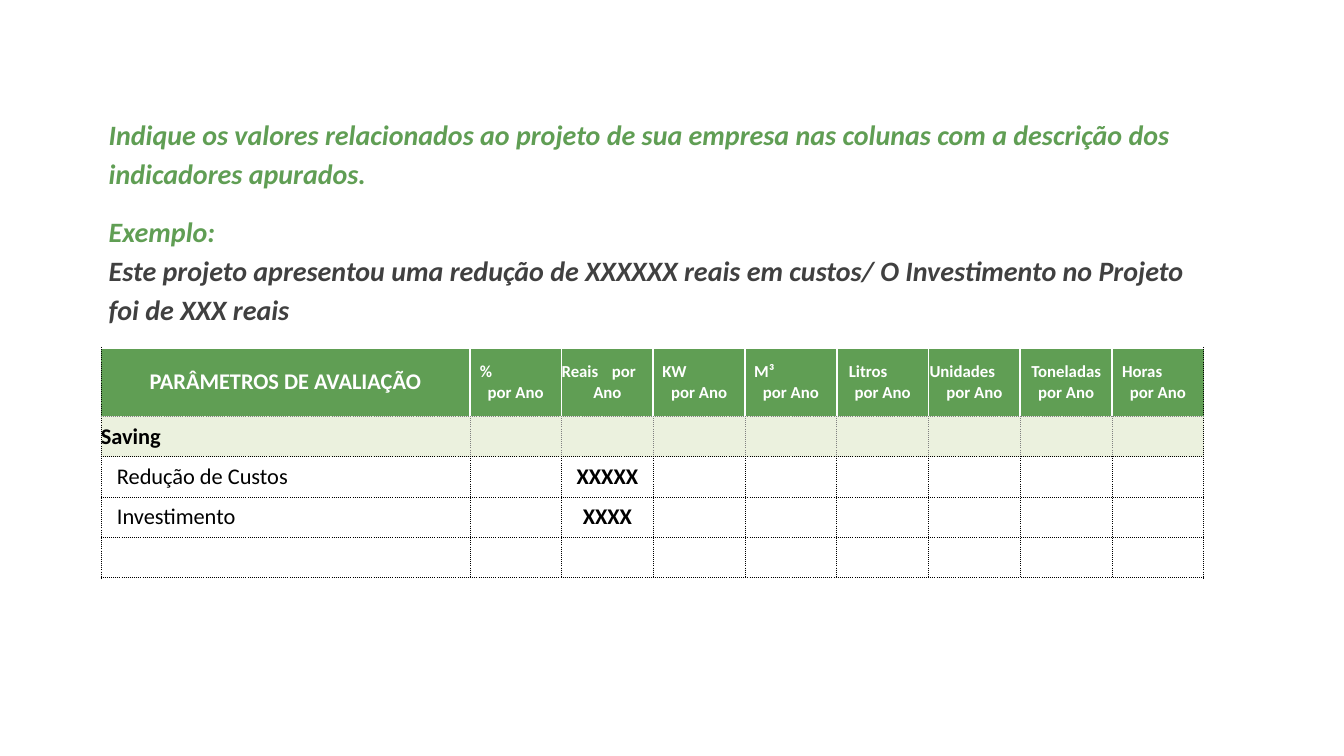
from lxml import etree
from pptx import Presentation
from pptx.dml.color import RGBColor
from pptx.enum.text import MSO_ANCHOR, PP_ALIGN
from pptx.oxml.ns import qn
from pptx.util import Pt

LEFT, CENTER = PP_ALIGN.LEFT, PP_ALIGN.CENTER
MIDDLE = MSO_ANCHOR.MIDDLE

GREEN = RGBColor(0x60, 0x9E, 0x54)
PALE_GREEN = RGBColor(0xEB, 0xF1, 0xDE)
WHITE = RGBColor(0xFF, 0xFF, 0xFF)
BLACK = RGBColor(0x00, 0x00, 0x00)
GRAY = RGBColor(0x80, 0x80, 0x80)
DARK_GRAY = RGBColor(0x40, 0x40, 0x40)

EMU_PER_PX = 9144
SOLID_WHITE = (WHITE, 1.5, "solid")
DOTTED_GRAY = (GRAY, 0.5, "sysDot")
DOTTED_BLACK = (BLACK, 0.5, "sysDot")

COLUMN_WIDTHS = [366] + [91] * 8
ROW_HEIGHTS = [68] + [40] * 4
UNITS = [
    ("%", "por Ano", 10), ("Reais\tpor", "Ano", 0), ("KW", "por Ano", 9),
    ("M³", "por Ano", 9), ("Litros", "por Ano", 12), ("Unidades", "por Ano", 1),
    ("Toneladas", "por Ano", 11), ("Horas", "por Ano", 10),
]
INDICATORS = [("Redução de Custos", "XXXXX"), ("Investimento", "XXXX")]


def px(length):
    return int(length * EMU_PER_PX)


class SlideBuilder:
    """Adds text and tables in one shared style to the current slide."""

    def __init__(self, deck, font="Calibri"):
        self.font = font
        self.page = deck.slides.add_slide(deck.slide_layouts[6])

    def style(self, para, size, color=None, bold=True, italic=False, align=LEFT):
        para.alignment = align
        font = para.font
        font.name, font.size, font.bold, font.italic = self.font, Pt(size), bold, italic
        if color is not None:
            font.color.rgb = color

    def instructions(self, left, top, width, height, paragraphs):
        box = self.page.shapes.add_textbox(px(left), px(top), px(width), px(height))
        frame = box.text_frame
        frame.word_wrap = True
        for index, spans in enumerate(paragraphs):
            para = frame.add_paragraph() if index else frame.paragraphs[0]
            self.style(para, 20, italic=True)
            para.line_spacing = 1.15
            para.space_before = Pt(10 if index else 0)
            para.space_after = Pt(4)
            for line, (text, color) in enumerate(spans):
                if line:
                    para.add_line_break()
                span = para.add_run()
                span.text = text
                span.font.color.rgb = color

    def table(self, left, top, widths, heights):
        frame = self.page.shapes.add_table(
            len(heights), len(widths), px(left), px(top), px(sum(widths)), px(sum(heights)))
        table = frame.table
        table.first_row = table.horz_banding = False
        for column, width in zip(table.columns, widths):
            column.width = px(width)
        for row, height in zip(table.rows, heights):
            row.height = px(height)
        return table

    def cell(self, cell, fill, borders):
        cell.margin_left = cell.margin_right = cell.margin_top = cell.margin_bottom = 0
        cell.vertical_anchor = MIDDLE
        properties = cell._tc.get_or_add_tcPr()
        for side, (color, width, dash) in zip("LRTB", borders):
            line = etree.SubElement(properties, qn(f"a:ln{side}"), w=str(Pt(width)))
            paint = etree.SubElement(line, qn("a:solidFill"))
            etree.SubElement(paint, qn("a:srgbClr"), val=str(color))
            etree.SubElement(line, qn("a:prstDash"), val=dash)
        cell.fill.solid()
        cell.fill.fore_color.rgb = fill

    def label(self, cell, text, size=16, color=BLACK, bold=True, align=LEFT, indent=0):
        cell.margin_left = px(indent)
        para = cell.text_frame.paragraphs[0]
        para.text = text
        self.style(para, size, color, bold, align=align)

    def unit(self, cell, name, period, indent, tab):
        frame = cell.text_frame
        first, second = frame.paragraphs[0], frame.add_paragraph()
        first.text, second.text = name, period
        properties = first._p.get_or_add_pPr()
        properties.set("marL", str(px(indent)))
        properties.set("indent", "0")
        tabs = etree.SubElement(properties, qn("a:tabLst"))
        etree.SubElement(tabs, qn("a:tab"), pos=str(px(tab)), algn="r")
        self.style(first, 12, WHITE)
        self.style(second, 12, WHITE, align=CENTER)


def cell_borders(row, column, last_column):
    if row == 0:
        inner, top, bottom = SOLID_WHITE, SOLID_WHITE, DOTTED_GRAY
    elif row == 1:
        inner, top, bottom = DOTTED_GRAY, DOTTED_GRAY, DOTTED_BLACK
    else:
        inner = top = bottom = DOTTED_BLACK
    left = DOTTED_BLACK if column == 0 else inner
    right = DOTTED_BLACK if column == last_column else inner
    return left, right, top, bottom


def main():
    deck = Presentation()
    deck.slide_width, deck.slide_height = px(1333), px(750)
    builder = SlideBuilder(deck)

    table = builder.table(100, 345, COLUMN_WIDTHS, ROW_HEIGHTS)
    row_fills = [GREEN, PALE_GREEN, WHITE, WHITE, WHITE]
    for row, fill in enumerate(row_fills):
        for column in range(len(COLUMN_WIDTHS)):
            borders = cell_borders(row, column, len(COLUMN_WIDTHS) - 1)
            builder.cell(table.cell(row, column), fill, borders)

    builder.label(table.cell(0, 0), "PARÂMETROS DE AVALIAÇÃO", color=WHITE, align=CENTER)
    for column, (name, period, indent) in enumerate(UNITS, start=1):
        builder.unit(table.cell(0, column), name, period, indent, tab=90)
    builder.label(table.cell(1, 0), "Saving")
    for row, (indicator, value) in enumerate(INDICATORS, start=2):
        builder.label(table.cell(row, 0), indicator, bold=False, indent=16)
        builder.label(table.cell(row, 2), value, align=CENTER)

    builder.instructions(98, 107, 1096, 220, [
        [("Indique os valores relacionados ao projeto de sua empresa nas colunas "
          "com a descrição dos indicadores apurados.", GREEN)],
        [("Exemplo:", GREEN),
         ("Este projeto apresentou uma redução de XXXXXX reais em custos/ "
          "O Investimento no Projeto foi de XXX reais", DARK_GRAY)],
    ])
    deck.save("out.pptx")


if __name__ == "__main__":
    main()
